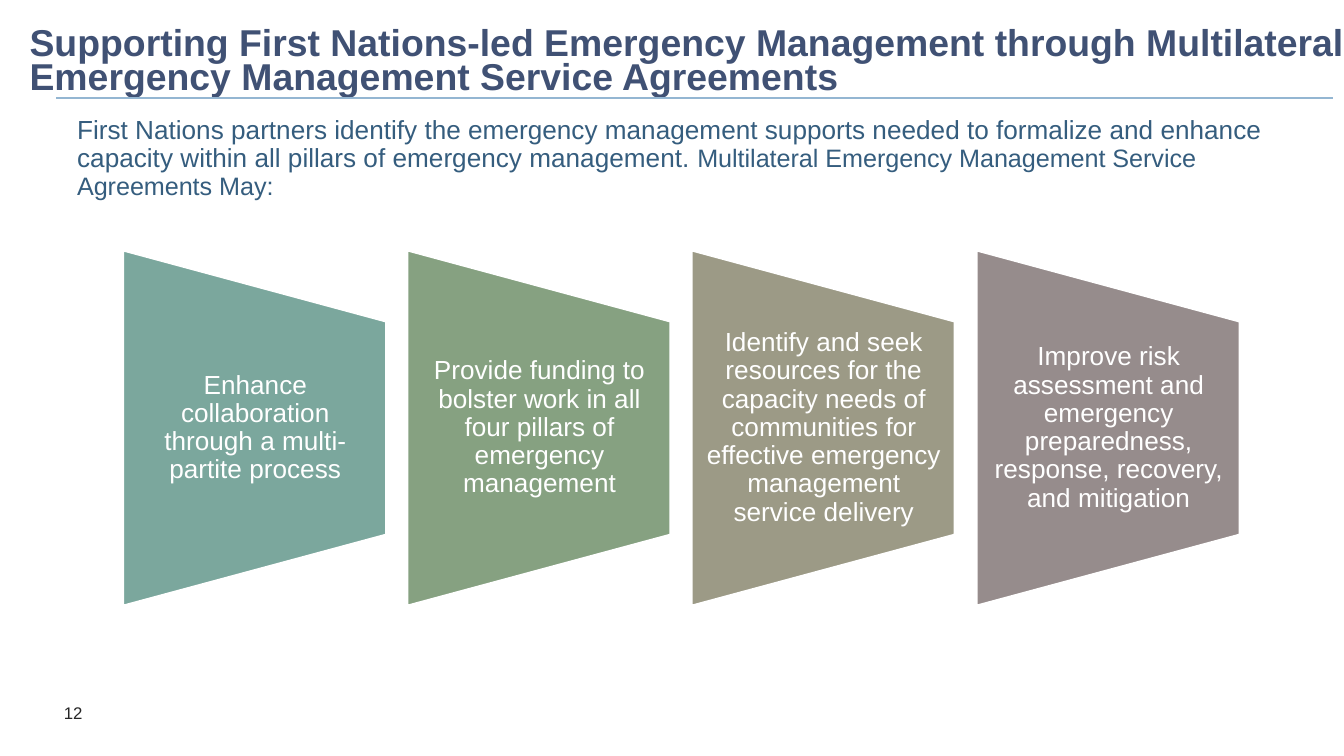
from dataclasses import dataclass

from lxml import etree
from pptx import Presentation
from pptx.dml.color import RGBColor
from pptx.enum.shapes import MSO_CONNECTOR, MSO_SHAPE
from pptx.enum.text import MSO_ANCHOR, MSO_AUTO_SIZE, PP_ALIGN
from pptx.oxml.ns import qn
from pptx.util import Emu, Pt

SCALE = 4572  # EMU per px, 200 px to the inch
LEFT, CENTER = PP_ALIGN.LEFT, PP_ALIGN.CENTER
TOP, MIDDLE = MSO_ANCHOR.TOP, MSO_ANCHOR.MIDDLE
FIXED = MSO_AUTO_SIZE.NONE
PANEL = MSO_SHAPE.FLOWCHART_MANUAL_OPERATION
STRAIGHT = MSO_CONNECTOR.STRAIGHT


@dataclass(frozen=True)
class Theme:
    font: str = "Arial"
    title: str = "405174"
    intro: str = "355D7E"
    rule: str = "94B6D2"
    number: str = "262626"
    white: str = "FFFFFF"
    head_size: float = 20
    body_size: float = 14
    tail_size: float = 13.5
    foot_size: float = 9


@dataclass(frozen=True)
class Box:
    x: int
    y: int
    w: int
    h: int


@dataclass(frozen=True)
class Run:
    text: str
    size: float
    color: str
    bold: bool = False


@dataclass(frozen=True)
class Step:
    text: str
    fill: str


THEME = Theme()
STEPS = [
    Step("Enhance collaboration through a multi-partite process", "7BA79D"),
    Step("Provide funding to bolster work in all four pillars of emergency "
         "management", "86A181"),
    Step("Identify and seek resources for the capacity needs of communities "
         "for effective emergency management service delivery", "9C9A86"),
    Step("Improve risk assessment and emergency preparedness, response, "
         "recovery, and mitigation", "968C8C"),
]
FIRST = Box(113, 440, 532, 394)  # first panel, before its quarter turn
LABEL = Box(183, 477, 394, 320)
SPAN = 1270  # from the first panel to the last


def px(value: int) -> Emu:
    return Emu(value * SCALE)


def place(box: Box) -> tuple:
    return px(box.x), px(box.y), px(box.w), px(box.h)


def rgb(code: str) -> RGBColor:
    return RGBColor.from_string(code)


def apply(target, values: dict) -> None:
    for name, value in values.items():
        setattr(target, name, value)


def write(shape, runs: list[Run], align=LEFT, anchor=TOP, gap=0.9,
          inset: tuple = (20, 10)) -> None:
    """Fill a shape with one paragraph of formatted runs."""
    side, edge = map(px, inset)
    frame = shape.text_frame
    apply(frame, {"word_wrap": True, "auto_size": FIXED,
                  "vertical_anchor": anchor,
                  "margin_left": side, "margin_right": side,
                  "margin_top": edge, "margin_bottom": edge})
    para = frame.paragraphs[0]
    apply(para, {"alignment": align, "line_spacing": gap,
                 "space_before": Pt(0)})
    for item in runs:
        run = para.add_run()
        run.text = item.text
        apply(run.font, {"name": THEME.font, "size": Pt(item.size),
                         "bold": item.bold})
        run.font.color.rgb = rgb(item.color)


def add_text(slide, box: Box, runs: list[Run], **style) -> None:
    write(slide.shapes.add_textbox(*place(box)), runs, **style)


def add_rule(slide, x: int, y: int, end: int) -> None:
    line = slide.shapes.add_connector(STRAIGHT, px(x), px(y), px(end), px(y))
    line.line.color.rgb = rgb(THEME.rule)
    line.line.width = Pt(1.5)
    etree.SubElement(line._element.spPr, qn("a:effectLst"))


def add_step(slide, step: Step, shift: int) -> None:
    box = Box(FIRST.x + shift, FIRST.y, FIRST.w, FIRST.h)
    panel = slide.shapes.add_shape(PANEL, *place(box))
    panel.rotation = 270
    panel.shadow.inherit = False
    panel.fill.solid()
    panel.fill.fore_color.rgb = rgb(step.fill)
    panel.line.color.rgb = rgb(THEME.white)
    panel.line.width = Pt(2)
    add_text(slide, Box(LABEL.x + shift, LABEL.y, LABEL.w, LABEL.h),
             [Run(step.text, THEME.body_size, THEME.white)],
             align=CENTER, anchor=MIDDLE, inset=(20, 0))


def main() -> None:
    deck = Presentation()
    apply(deck, {"slide_width": px(2000), "slide_height": px(1125)})
    slide = deck.slides.add_slide(deck.slide_layouts[5])

    # Page number and rule
    add_text(slide, Box(15, 1039, 188, 48),
             [Run("12", THEME.foot_size, THEME.number)], align=CENTER)
    add_rule(slide, 84, 146, 1984)

    # Title
    title = slide.shapes.title
    spot = place(Box(44, 45, 1968, 58))
    apply(title, dict(zip(("left", "top", "width", "height"), spot)))
    write(title, [Run("Supporting First Nations-led Emergency Management "
                      "through Multilateral Emergency Management Service "
                      "Agreements", THEME.head_size, THEME.title, True)],
          gap=Pt(18), inset=(0, 0))

    # Four panels, evenly spread
    for i, step in enumerate(STEPS):
        add_step(slide, step, SPAN * i // (len(STEPS) - 1))

    # Introduction
    add_text(slide, Box(95, 164, 1904, 146), [
        Run("First Nations partners identify the emergency management "
            "supports needed to formalize and enhance capacity within all "
            "pillars of emergency management.", THEME.body_size, THEME.intro),
        Run(" ", THEME.tail_size, THEME.intro, True),
        Run("Multilateral Emergency Management Service Agreements May:",
            THEME.tail_size, THEME.intro),
    ])

    deck.save("out.pptx")


if __name__ == "__main__":
    main()
